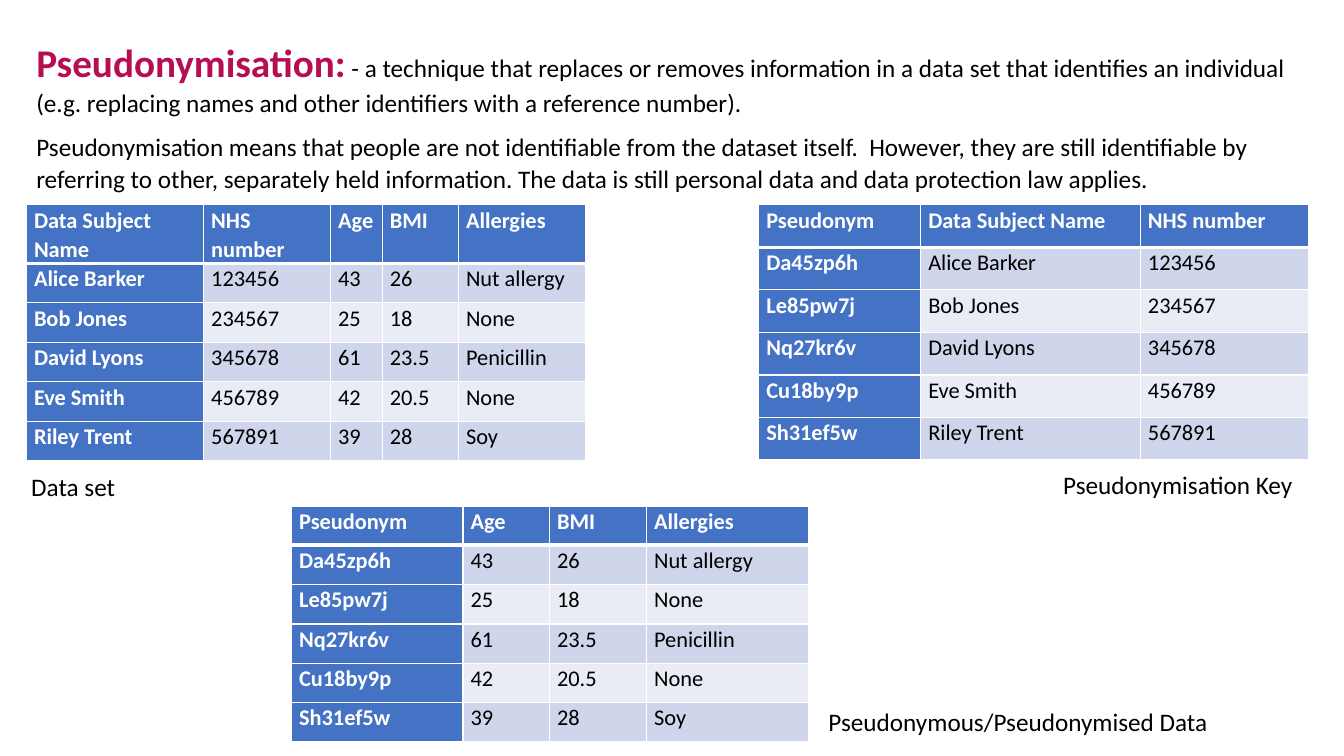
"""Build a slide that explains pseudonymisation with three linked tables."""
from lxml import etree
from pptx import Presentation
from pptx.dml.color import RGBColor
from pptx.enum import text
from pptx.oxml.ns import qn
from pptx.util import Pt

FONT = "Calibri"
COLORS = {
    "accent": "B70D53",
    "header": "4472C4",
    "odd": "CFD5EA",
    "even": "E9EBF5",
    "white": "FFFFFF",
    "black": "000000",
}
PEOPLE = [
    ("Da45zp6h", "Alice Barker", "123456", "43", "26", "Nut allergy"),
    ("Le85pw7j", "Bob Jones", "234567", "25", "18", "None"),
    ("Nq27kr6v", "David Lyons", "345678", "61", "23.5", "Penicillin"),
    ("Cu18by9p", "Eve Smith", "456789", "42", "20.5", "None"),
    ("Sh31ef5w", "Riley Trent", "567891", "39", "28", "Soy"),
]
FIELDS = ("Pseudonym", "Data Subject Name", "NHS number", "Age", "BMI", "Allergies")
DEFINITION = (
    " - a technique that replaces or removes information in a data set that "
    "identifies an individual (e.g. replacing names and other identifiers with "
    "a reference number)."
)
EXPLANATION = (
    "Pseudonymisation means that people are not identifiable from the dataset "
    "itself.  However, they are still identifiable by referring to other, "
    "separately held information. The data is still personal data and data "
    "protection law applies."
)


def rgb(name):
    return RGBColor.from_string(COLORS[name])


def add_run(p, content, size, color="black", bold=False):
    r = p.add_run()
    r.text = content
    r.font.name = FONT
    r.font.size = Pt(size)
    r.font.bold = bold
    r.font.color.rgb = rgb(color)


def set_spacing(p):
    p.line_spacing = 1.07
    p.space_after = Pt(8)


def add_header_borders(cell):
    tc_pr = cell._tc.get_or_add_tcPr()
    for i, (side, width) in enumerate((("L", 1), ("R", 1), ("T", 1), ("B", 3))):
        ln = etree.Element(qn(f"a:ln{side}"), w=str(Pt(width)))
        fill = etree.SubElement(ln, qn("a:solidFill"))
        etree.SubElement(fill, qn("a:srgbClr"), val=COLORS["white"])
        tc_pr.insert(i, ln)


def fill_cell(cell, content, row, col):
    is_head = row == 0 or col == 0
    cell.margin_left = cell.margin_right = Pt(5.4)
    cell.margin_top = cell.margin_bottom = 0
    cell.fill.solid()
    cell.fill.fore_color.rgb = rgb("header" if is_head else "odd" if row % 2 else "even")
    if row == 0:
        add_header_borders(cell)
    p = cell.text_frame.paragraphs[0]
    set_spacing(p)
    add_run(p, content, 16, "white" if is_head else "black", is_head)


def add_data_table(s, left, top, fields, widths, row_height, head_height):
    rows = [[record[i] for i in fields] for record in [FIELDS, *PEOPLE]]
    heights = [head_height] + [row_height] * len(PEOPLE)
    frame = s.shapes.add_table(
        len(rows), len(fields), Pt(left), Pt(top), Pt(sum(widths)), Pt(sum(heights))
    )
    table = frame.table
    table.first_col = True
    for column, width in zip(table.columns, widths):
        column.width = Pt(width)
    for i, (values, height) in enumerate(zip(rows, heights)):
        table.rows[i].height = Pt(height)
        for j, value in enumerate(values):
            fill_cell(table.cell(i, j), value, i, j)


def add_caption(s, content, left, top, width):
    sp = s.shapes.add_textbox(Pt(left), Pt(top), Pt(width), Pt(29))
    tf = sp.text_frame
    tf.word_wrap = True
    p = tf.paragraphs[0]
    p.alignment = text.PP_ALIGN.CENTER
    add_run(p, content, 18)


def fill_title(sp):
    sp.left, sp.top, sp.width, sp.height = Pt(18.7), Pt(21.6), Pt(915), Pt(121)
    tf = sp.text_frame
    tf.word_wrap = True
    tf.auto_size = text.MSO_AUTO_SIZE.NONE
    tf.vertical_anchor = text.MSO_ANCHOR.TOP
    paragraphs = [
        [("Pseudonymisation:", 28, "accent", True), (DEFINITION, 18)],
        [(EXPLANATION, 18)],
    ]
    for i, runs in enumerate(paragraphs):
        p = tf.add_paragraph() if i else tf.paragraphs[0]
        p.alignment = text.PP_ALIGN.LEFT
        set_spacing(p)
        for run in runs:
            add_run(p, *run)


def main():
    prs = Presentation()
    prs.slide_width, prs.slide_height = Pt(960), Pt(540)
    s = prs.slides.add_slide(prs.slide_layouts[5])
    fill_title(s.shapes.title)
    add_data_table(s, 18.9, 146.3, (1, 2, 3, 4, 5), (126.6, 90.7, 36.9, 54.5, 90.9), 28.2, 41.2)
    add_data_table(s, 542, 146.3, (0, 1, 2), (115.7, 156.9, 120), 30.4, 30.4)
    add_data_table(s, 208.3, 361.4, (0, 3, 4, 5), (122.4, 61.9, 69.3, 115.5), 28.1, 28.1)
    add_caption(s, "Data set", 0, 332.8, 104.6)
    add_caption(s, "Pseudonymisation Key", 748, 332, 186.6)
    add_caption(s, "Pseudonymous/Pseudonymised Data", 577.4, 501.2, 299.5)
    prs.save("out.pptx")


if __name__ == "__main__":
    main()
